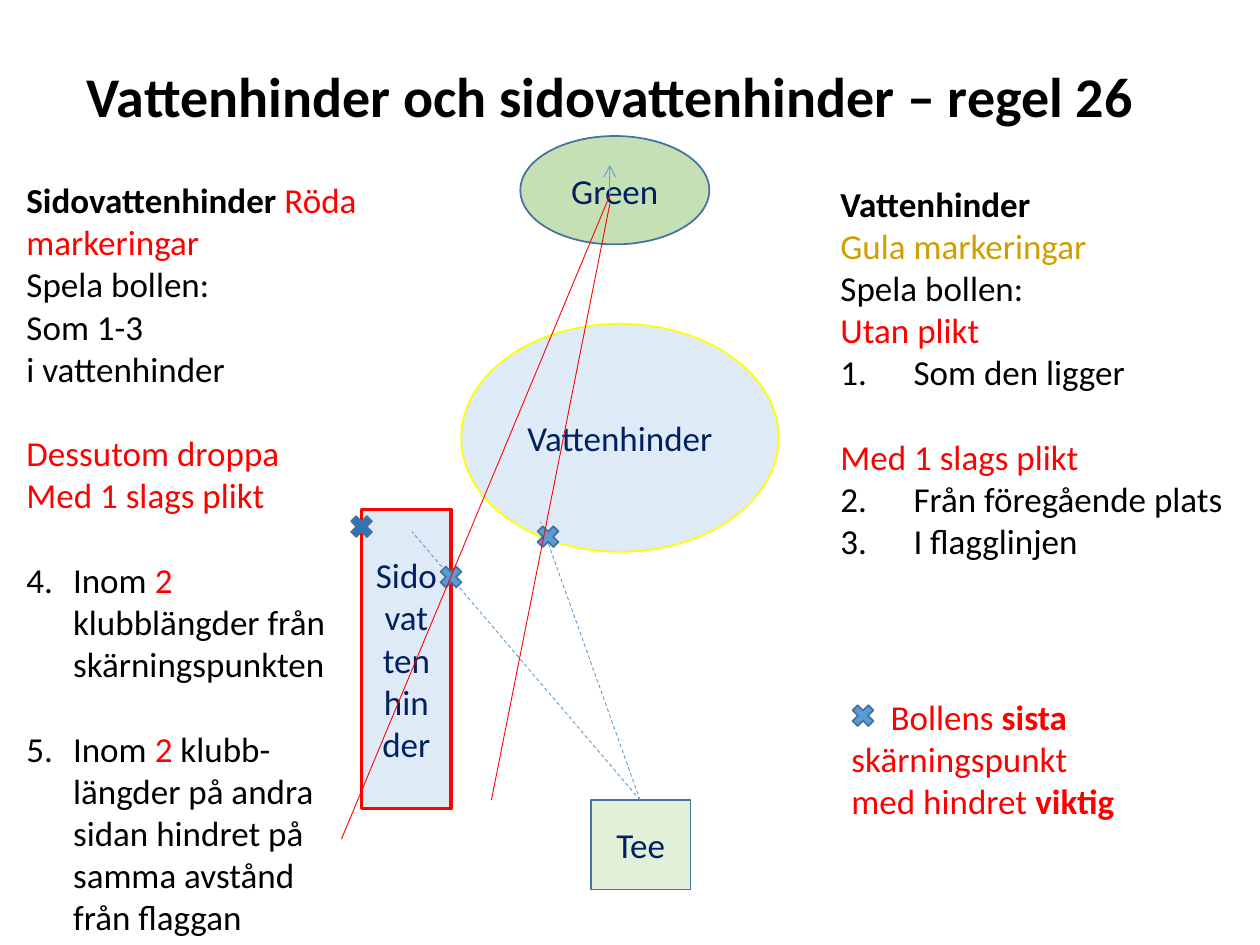
from dataclasses import dataclass
from typing import Optional

from lxml.etree import SubElement
from pptx import Presentation
from pptx.dml.color import RGBColor
from pptx.enum.dml import MSO_LINE
from pptx.enum.shapes import MSO_CONNECTOR, MSO_SHAPE as SHAPE
from pptx.enum.text import MSO_ANCHOR as ANCHOR, MSO_AUTO_SIZE as FIT, PP_ALIGN as ALIGN
from pptx.oxml.ns import qn
from pptx.util import Inches, Pt

FONT = "Calibri"
BLACK, RED, GOLD, NAVY = "000000", "FF0000", "D09E00", "002060"
BLUE, STEEL, WATER, YELLOW = "5B9BD5", "43739E", "DEEBF7", "FFFF00"
GAP = 24.4  # one line of 20 point text
CROSS = 0.24


@dataclass
class Area:
    kind: SHAPE
    box: tuple
    fill: str
    edge: str
    width: float = 1
    text: str = ""


@dataclass
class Line:
    start: tuple
    end: tuple
    color: str
    dash: bool = False
    arrow: bool = False


@dataclass
class Run:
    text: str
    color: str = BLACK
    bold: bool = False


@dataclass
class Para:
    runs: list
    before: float = 0
    number: Optional[int] = None
    hang: float = 0
    first: float = 0


def rgb(value: str) -> RGBColor:
    return RGBColor.from_string(value)


def style(run, size: float, color: str, bold: bool = False) -> None:
    font = run.font
    font.name, font.size, font.bold = FONT, Pt(size), bold
    font.color.rgb = rgb(color)


def place(shape, box: tuple) -> None:
    shape.left, shape.top, shape.width, shape.height = map(Inches, box)


def draw_area(slide, area: Area) -> None:
    shape = slide.shapes.add_shape(area.kind, *map(Inches, area.box))
    shape.shadow.inherit = False
    shape.fill.solid()
    shape.fill.fore_color.rgb = rgb(area.fill)
    shape.line.color.rgb = rgb(area.edge)
    shape.line.width = Pt(area.width)
    frame = shape.text_frame
    frame.vertical_anchor = ANCHOR.MIDDLE
    frame.text = area.text
    for para in frame.paragraphs:
        para.alignment = ALIGN.CENTER
        for run in para.runs:
            style(run, 20, NAVY)


def draw_line(slide, line: Line) -> None:
    ends = map(Inches, (*line.start, *line.end))
    shape = slide.shapes.add_connector(MSO_CONNECTOR.STRAIGHT, *ends)
    shape.line.color.rgb = rgb(line.color)
    shape.line.width = Pt(0.5)
    if line.dash:
        shape.line.dash_style = MSO_LINE.DASH
    if line.arrow:
        SubElement(shape.line._get_or_add_ln(), qn("a:tailEnd"), type="arrow")
    SubElement(shape._element.spPr, qn("a:effectLst"))


def draw_cross(slide, left: float, top: float, fill: str = BLUE) -> None:
    box = (left, top, CROSS, CROSS)
    draw_area(slide, Area(SHAPE.MATH_MULTIPLY, box, fill, STEEL))


def indent(para, spec: Para) -> None:
    """Set the margins and the number, or switch the template's bullet off."""
    props = para._p.get_or_add_pPr()
    props.set("marL", str(Inches(spec.hang)))
    props.set("indent", str(Inches(spec.first - spec.hang)))
    if spec.number is None:
        SubElement(props, qn("a:buNone"))
    else:
        SubElement(props, qn("a:buFont"), typeface=FONT)
        SubElement(props, qn("a:buAutoNum"), type="arabicPeriod",
                   startAt=str(spec.number))


def fill_text(frame, paras: list) -> None:
    frame.word_wrap = True
    frame.auto_size = FIT.NONE
    frame.vertical_anchor = ANCHOR.TOP
    for i, spec in enumerate(paras):
        para = frame.add_paragraph() if i else frame.paragraphs[0]
        para.alignment = ALIGN.LEFT
        para.space_before = Pt(spec.before)
        indent(para, spec)
        for part in spec.runs:
            run = para.add_run()
            run.text = part.text
            style(run, 20, part.color, part.bold)


def plain(text: str, color: str = BLACK, before: float = 0) -> Para:
    return Para([Run(text, color)], before)


def drop(rest: str) -> Para:
    """An option of two club lengths; the list goes on from 4."""
    return Para([Run("Inom "), Run("2", RED), Run(rest)], GAP, 4, 0.37)


def option(text: str, start: int) -> Para:
    return Para([Run(text)], number=start, hang=0.58)


SIDE = [
    Para([Run("Sidovattenhinder ", bold=True), Run("Röda markeringar", RED)]),
    plain("Spela bollen:"),
    plain("Som 1-3"),
    plain("i vattenhinder"),
    plain("Dessutom droppa", RED, GAP),
    plain("Med 1 slags plikt", RED),
    drop(" klubblängder från skärningspunkten"),
    drop(" klubb-längder på andra sidan hindret på samma avstånd från flaggan"),
]
POND = [
    Para([Run("Vattenhinder", bold=True)]),
    plain("Gula markeringar", GOLD),
    plain("Spela bollen:"),
    plain("Utan plikt", RED),
    option("Som den ligger", 1),
    plain("Med 1 slags plikt", RED, GAP),
    option("Från föregående plats", 2),
    option("I flagglinjen", 2),
]
LEGEND = [Para([
    Run("Bollens ", RED), Run("sista", RED, True),
    Run(" skärningspunkt med hindret ", RED), Run("viktig", RED, True),
], first=0.31)]

AREAS = [
    Area(SHAPE.OVAL, (3.66, 2.57, 2.52, 1.81), WATER, YELLOW, text="Vattenhinder"),
    Area(SHAPE.RECTANGLE, (2.87, 4.04, 0.71, 2.38), WATER, RED, 1.75,
         "Sidovat\nten\nhin\nder"),
    Area(SHAPE.RECTANGLE, (4.69, 6.35, 0.79, 0.71), "E2F0D9", STEEL, text="Tee"),
    Area(SHAPE.OVAL, (4.13, 1.08, 1.5, 0.86), "C5E0B4", STEEL, text="Green"),
]
TEE, FLAG = (5.08, 6.35), (4.84, 1.55)
SHOTS = [
    Line(TEE, (4.29, 4.14), BLUE, dash=True),
    Line(FLAG, (4.84, 1.31), BLUE, arrow=True),
    Line(TEE, (3.27, 4.22), BLUE, dash=True),
]
SIGHTS = [Line((4.84, 1.62), (3.9, 6.35), RED), Line(FLAG, (2.71, 6.66), RED)]


def main() -> None:
    deck = Presentation()
    deck.slide_width, deck.slide_height = Inches(10), Inches(7.5)
    slide = deck.slides.add_slide(deck.slide_layouts[3])
    title, left, right = list(slide.placeholders)[:3]

    place(title, (0.59, 0.44, 8.66, 0.64))
    frame = title.text_frame
    frame.text = "Vattenhinder och sidovattenhinder – regel 26"
    frame.auto_size, frame.vertical_anchor = FIT.NONE, ANCHOR.TOP
    frame.paragraphs[0].alignment = ALIGN.LEFT
    style(frame.paragraphs[0].runs[0], 32, BLACK, True)

    place(left, (0.11, 1.37, 2.84, 6.16))
    fill_text(left.text_frame, SIDE)
    place(right, (6.57, 1.4, 3.31, 3.13))
    fill_text(right.text_frame, POND)

    for area in AREAS:
        draw_area(slide, area)
    for shot in SHOTS:
        draw_line(slide, shot)
    draw_cross(slide, 2.75, 4.06, "2E75B6")
    draw_cross(slide, 3.46, 4.46)
    draw_cross(slide, 4.23, 4.14)
    for sight in SIGHTS:
        draw_line(slide, sight)

    legend = slide.shapes.add_textbox(*map(Inches, (6.66, 5.47, 2.44, 1.11)))
    fill_text(legend.text_frame, LEGEND)
    draw_cross(slide, 6.73, 5.56)
    deck.save("out.pptx")


if __name__ == "__main__":
    main()
